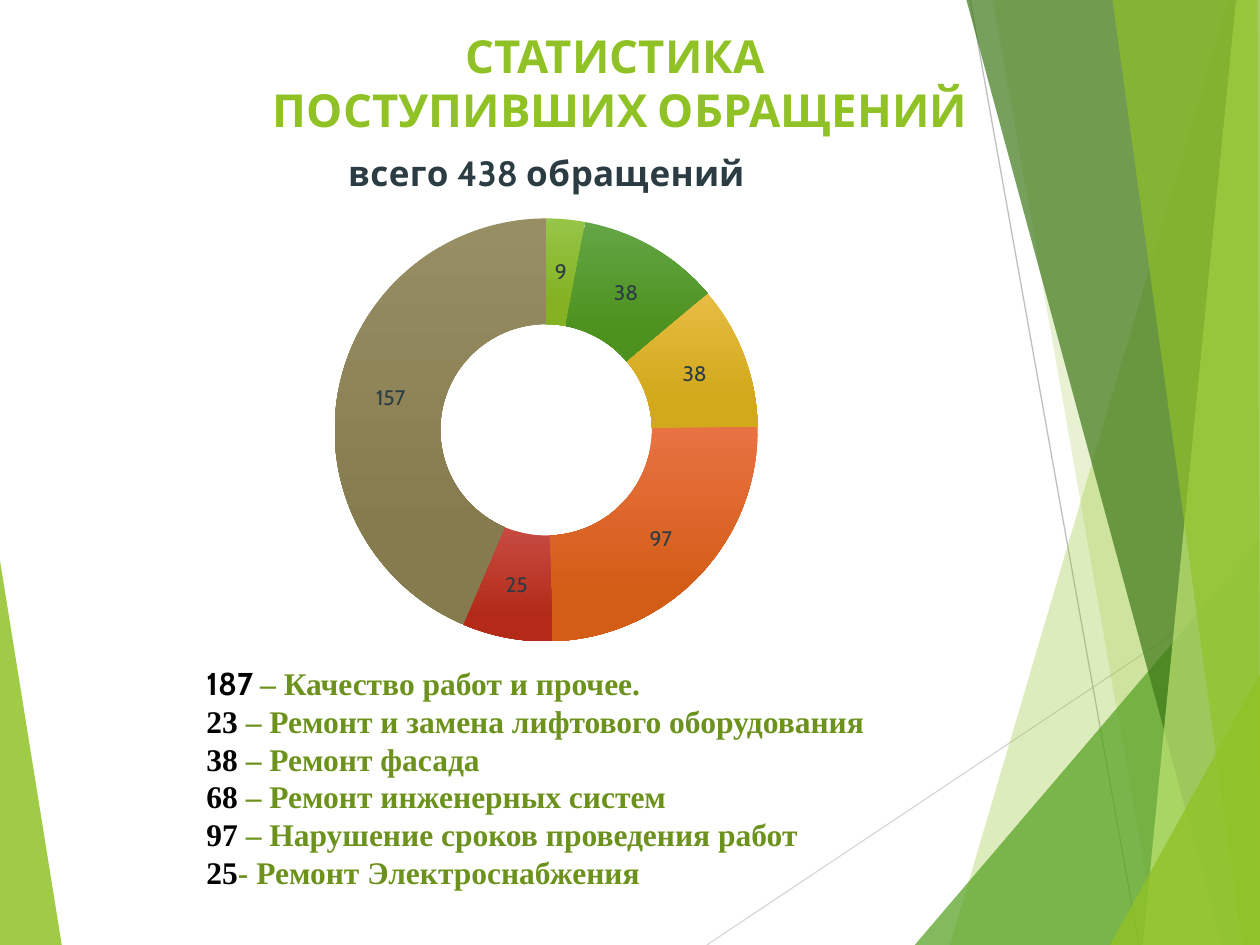
import pptx
import pptx.chart.data
import pptx.dml.color
import pptx.enum.chart
import pptx.enum.shapes
import pptx.enum.text
import pptx.oxml
import pptx.oxml.ns
import pptx.util
from pptx.util import Inches

COLORS = {
    "lime": "90C226", "green": "54A021", "dark green": "3F7819", "pale": "C0E474",
    "olive": "6C921D", "black": "000000", "slate": "2C3C43",
    "light line": "D9D9D9", "line": "BFBFBF",
}


def rgb(value):
    return pptx.dml.color.RGBColor.from_string(COLORS.get(value, value))


def write(paragraph, text, size=18, font="Times New Roman", color="black", bold=True):
    run = paragraph.add_run()
    run.text = text
    run.font.size = pptx.util.Pt(size)
    run.font.name = font
    run.font.bold = bold
    run.font.color.rgb = rgb(color)


presentation = pptx.Presentation()
presentation.slide_width = Inches(10)
presentation.slide_height = Inches(7.5)
slide = presentation.slides.add_slide(presentation.slide_layouts[5])
shapes = slide.shapes

# Thin crossing lines behind the facets
for x1, y1, x2, y2, color in [
    (5.61, 7.5, 10, 4.57, "light line"),
    (7.7, 0, 9.04, 7.5, "line"),
]:
    connector = shapes.add_connector(
        pptx.enum.shapes.MSO_CONNECTOR.STRAIGHT, Inches(x1), Inches(y1), Inches(x2), Inches(y2))
    connector.line.color.rgb = rgb(color)
    connector.line.width = pptx.util.Pt(0.75)
    connector._element.spPr.append(pptx.oxml.parse_xml(
        "<a:effectLst %s/>" % pptx.oxml.ns.nsdecls("a")))

# Translucent facets: colour, opacity in percent, corners
facets = [
    ("lime", 85, [(0, 4.45), (0.49, 7.5), (0, 7.5)]),
    ("lime", 30, [(9.75, 0), (7.54, 7.5), (10, 7.5), (10, 0)]),
    ("lime", 20, [(7.88, 0), (9.19, 7.5), (10, 7.5), (10, 0)]),
    ("green", 72, [(7.26, 7.5), (10, 4.29), (10, 7.5)]),
    ("dark green", 70, [(7.67, 0), (9.7, 7.5), (10, 7.5), (10, 0)]),
    ("pale", 70, [(9.81, 0), (9.07, 7.5), (10, 7.5), (10, 0)]),
    ("lime", 65, [(8.83, 0), (9.86, 7.5), (10, 7.5), (9.98, 0)]),
    ("lime", 80, [(8.81, 7.5), (10, 5.35), (10, 7.5)]),
]
for color, opacity, corners in facets:
    points = [(Inches(x), Inches(y)) for x, y in corners]
    builder = shapes.build_freeform(*points[0])
    builder.add_line_segments(points[1:], close=True)
    facet = builder.convert_to_shape()
    facet.shadow.inherit = False
    facet.line.fill.background()
    facet.fill.solid()
    facet.fill.fore_color.rgb = rgb(color)
    color_element = facet._element.spPr.find(".//" + pptx.oxml.ns.qn("a:srgbClr"))
    color_element.append(pptx.oxml.parse_xml(
        '<a:alpha %s val="%d"/>' % (pptx.oxml.ns.nsdecls("a"), opacity * 1000)))

# Title, brought in front of the facets
title = shapes.title
title.left, title.top, title.width, title.height = map(Inches, (0.35, 0.17, 9.15, 1.33))
shapes._spTree.append(title._element)
frame = title.text_frame
frame.auto_size = pptx.enum.text.MSO_AUTO_SIZE.NONE
frame.vertical_anchor = pptx.enum.text.MSO_ANCHOR.TOP
paragraph = frame.paragraphs[0]
paragraph.alignment = pptx.enum.text.PP_ALIGN.CENTER
write(paragraph, "СТАТИСТИКА ", size=26, font="Cabin", color="lime")
paragraph.add_line_break()
write(paragraph, "ПОСТУПИВШИХ ОБРАЩЕНИЙ", size=26, font="Cabin", color="lime")

# Doughnut chart: label, share, gradient from top to bottom
slices = [
    ("9", 3, "97C547", "84B223"),
    ("38", 11, "63A545", "4D921E"),
    ("38", 11, "E7BC43", "D2A91B"),
    ("97", 25, "E87242", "D35D16"),
    ("25", 7, "C74B42", "B32B18"),
    ("157", 44, "988E64", "857B4E"),
]
chart_title = "всего 438 обращений"
chart_data = pptx.chart.data.CategoryChartData()
chart_data.categories = [item[0] for item in slices]
chart_data.add_series(chart_title, [item[1] for item in slices])
chart = shapes.add_chart(
    pptx.enum.chart.XL_CHART_TYPE.DOUGHNUT,
    Inches(0.52), Inches(0.99), Inches(7.63), Inches(4.25), chart_data).chart
chart.has_legend = False
chart.font.size = pptx.util.Pt(10)
chart.font.name = "Cabin"
chart.font.color.rgb = rgb("black")
chart.has_title = True
write(chart.chart_title.text_frame.paragraphs[0], chart_title,
      size=20, font="Cabin", color="slate")
chart.chart_title.include_in_layout = False

plot = chart.plots[0]
plot.vary_by_categories = True
plot._element.find(pptx.oxml.ns.qn("c:holeSize")).set("val", "34")
for index, (label, _, top_color, bottom_color) in enumerate(slices):
    point = plot.series[0].points[index]
    fill = point.format.fill
    fill.gradient()
    fill.gradient_angle = 270
    for stop, position, color in zip(fill.gradient_stops, (0, 0.78), (top_color, bottom_color)):
        stop.position = position
        stop.color.rgb = rgb(color)
    point.format.line.fill.background()
    write(point.data_label.text_frame.paragraphs[0], label,
          size=12, font="Cabin", color="slate", bold=False)

# Fixed place of the ring inside the chart frame
plot_area = chart._chartSpace.chart.plotArea
for old_layout in plot_area.findall(pptx.oxml.ns.qn("c:layout")):
    plot_area.remove(old_layout)
fractions = "".join('<c:%s val="%s"/>' % pair for pair in [
    ("layoutTarget", "inner"), ("xMode", "edge"), ("yMode", "edge"),
    ("x", 0.28), ("y", 0.17), ("w", 0.44), ("h", 0.8)])
plot_area.insert(0, pptx.oxml.parse_xml(
    "<c:layout %s><c:manualLayout>%s</c:manualLayout></c:layout>"
    % (pptx.oxml.ns.nsdecls("c"), fractions)))

# Key to the numbers
key = [
    ("187 ", "– Качество работ и прочее."),
    ("23", " – Ремонт и замена лифтового оборудования"),
    ("38", " – Ремонт фасада"),
    ("68", " – Ремонт инженерных систем"),
    ("97", " – Нарушение сроков проведения работ"),
    ("25", "- Ремонт Электроснабжения"),
]
frame = shapes.add_textbox(Inches(1.54), Inches(5.22), Inches(5.48), Inches(1.92)).text_frame
frame.word_wrap = True
for index, (number, meaning) in enumerate(key):
    paragraph = frame.add_paragraph() if index else frame.paragraphs[0]
    paragraph.line_spacing = pptx.util.Pt(21.6)
    write(paragraph, number, font="Times New Roman" if index else "Cabin")
    write(paragraph, meaning, color="olive")

presentation.save("out.pptx")
